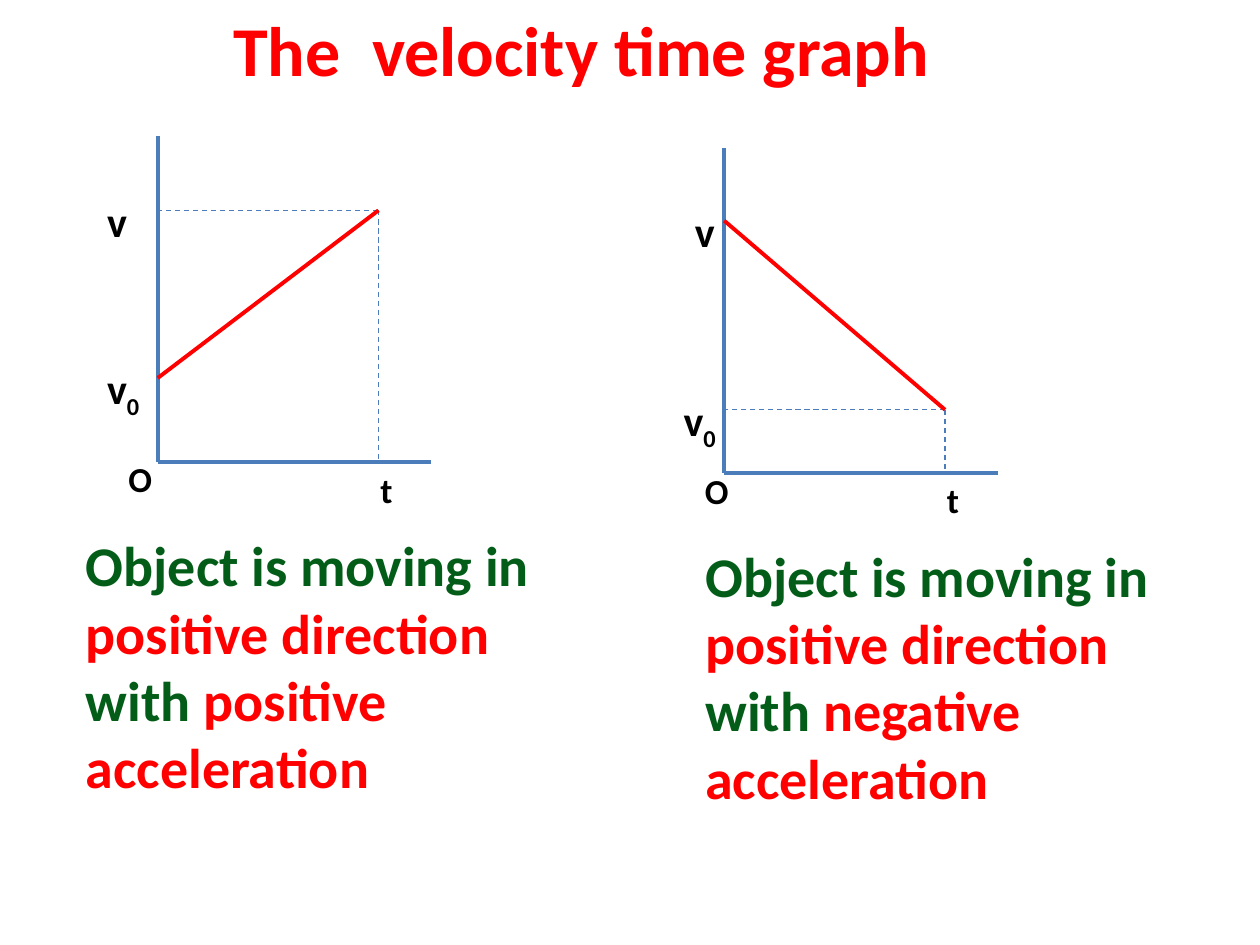
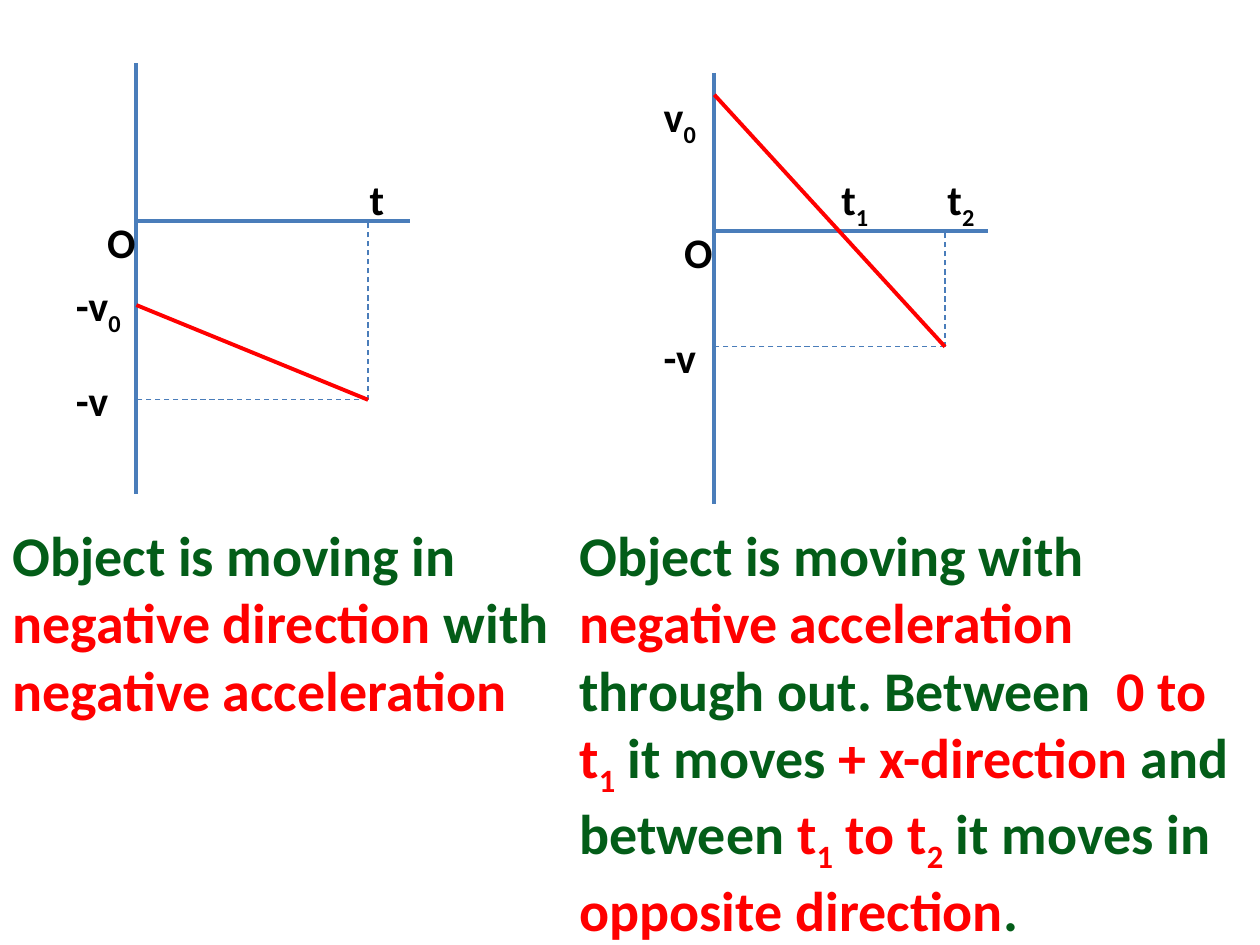
from dataclasses import dataclass

from lxml.etree import SubElement
from pptx import Presentation
from pptx.dml.color import RGBColor
from pptx.enum.dml import MSO_LINE_DASH_STYLE as Dash
from pptx.enum.shapes import MSO_CONNECTOR as Connector
from pptx.enum.text import MSO_ANCHOR as Anchor, MSO_AUTO_SIZE as AutoSize, PP_ALIGN as Align
from pptx.oxml.ns import qn
from pptx.util import Cm, Pt

RED = RGBColor(0xFF, 0x00, 0x00)
GREEN = RGBColor(0x03, 0x5D, 0x18)
BLUE = RGBColor(0x4A, 0x7D, 0xBA)
BLACK = RGBColor(0x00, 0x00, 0x00)
FONT = "Calibri"
TITLE_ONLY, BLANK = 5, 6

AXIS_LENGTH = 5.51
LABEL_WIDTHS = {"t": 0.8, "t_1": 1.09, "t_2": 1.09, "O": 1.05,
                "v": 0.91, "v_0": 1.22, "-v": 1.3, "-v_0": 1.47}


@dataclass
class Graph:
    """A velocity-time graph in cm; all but the origin is relative to the origin."""
    origin: tuple
    top: float
    bottom: float
    start: float
    end: tuple
    labels: list  # (text, left, top)
    axis_label_size: int = 24


def set_font(para, size, color):
    para.font.name = FONT
    para.font.size = Pt(size)
    para.font.bold = True
    para.font.color.rgb = color


def add_text(page, text, left, top, width, height, size, color, wrap=False):
    """Add a text box; *...* marks red words and _ puts the next character below."""
    box = page.shapes.add_textbox(Cm(left), Cm(top), Cm(width), Cm(height))
    box.text_frame.word_wrap = wrap
    para = box.text_frame.paragraphs[0]
    set_font(para, size, color)
    for index, phrase in enumerate(text.split("*")):
        base, *lowered = phrase.split("_")
        pieces = [(base, False)]
        for part in lowered:
            pieces += [(part[0], True), (part[1:], False)]
        for piece, is_subscript in pieces:
            if not piece:
                continue
            span = para.add_run()
            span.text = piece
            if index % 2:
                span.font.color.rgb = RED
            if is_subscript:
                span.font._element.set("baseline", "-25000")


def add_line(page, origin, start, end, color=BLUE, weight=2.25, dash=None):
    left, top = origin
    line = page.shapes.add_connector(
        Connector.STRAIGHT, Cm(left + start[0]), Cm(top + start[1]),
        Cm(left + end[0]), Cm(top + end[1]))
    line.line.color.rgb = color
    line.line.width = Pt(weight)
    if dash:
        line.line.dash_style = dash
    SubElement(line.element.spPr, qn("a:effectLst"))


def add_graph(page, graph):
    origin = graph.origin
    end_time, end_velocity = graph.end
    add_line(page, origin, (0, graph.top), (0, graph.bottom))
    add_line(page, origin, (AXIS_LENGTH, 0), (0, 0))
    for foot in ((0, end_velocity), (end_time, 0)):
        add_line(page, origin, graph.end, foot, weight=0.75, dash=Dash.DASH)
    add_line(page, origin, (0, graph.start), graph.end, RED)
    for text, left, top in graph.labels:
        size = 24 if "v" in text else graph.axis_label_size
        add_text(page, text, origin[0] + left, origin[1] + top,
                 LABEL_WIDTHS[text], size * 0.05, size, BLACK)


def add_caption(page, text, left, top, width, height):
    add_text(page, text, left, top, width, height, 32, GREEN, wrap=True)


def add_title(page, text, left, top, width, height):
    title = page.shapes.title
    title.left, title.top, title.width, title.height = map(Cm, (left, top, width, height))
    frame = title.text_frame
    frame.text = text
    frame.vertical_anchor = Anchor.TOP
    frame.auto_size = AutoSize.NONE
    para = frame.paragraphs[0]
    para.alignment = Align.LEFT
    set_font(para, 40, RED)


def add_positive_direction_page(deck):
    page = deck.slides.add_slide(deck.slide_layouts[TITLE_ONLY])
    add_title(page, "The  velocity time graph", 4.45, 0, 18.85, 1.96)
    add_graph(page, Graph(
        (3.18, 9.32), -6.58, 0, -1.7, (4.45, -5.08),
        [("t", 4.24, 0), ("O", -0.84, -0.23), ("v_0", -1.27, -2.13), ("v", -1.27, -5.51)],
        axis_label_size=20))
    add_caption(page, "Object is moving in *positive direction *with *positive acceleration*",
                1.48, 10.58, 9.95, 5.74)
    add_graph(page, Graph(
        (14.6, 9.53), -6.55, 0, -5.08, (4.45, -1.27),
        [("t", 4.24, 0), ("O", -0.64, -0.2), ("v_0", -1.07, -1.7), ("v", -0.84, -5.51)],
        axis_label_size=20))
    add_caption(page, "Object is moving in *positive direction *with *negative  acceleration*",
                13.97, 10.79, 9.95, 5.74)


def add_negative_velocity_page(deck):
    page = deck.slides.add_slide(deck.slide_layouts[BLANK])
    add_graph(page, Graph(
        (2.75, 4.45), -3.18, 5.51, 1.7, (4.67, 3.61),
        [("t", 4.45, -1.07), ("O", -0.84, -0.2), ("-v_0", -1.47, 1.07), ("-v", -1.47, 2.97)]))
    add_caption(page, "Object is moving in *negative direction *with *negative acceleration*",
                0, 10.37, 11.64, 4.37)
    add_graph(page, Graph(
        (14.4, 4.65), -3.18, 5.51, -2.74, (4.65, 2.34),
        [("t_1", 2.31, -1.27), ("t_2", 4.45, -1.27), ("O", -0.86, -0.2),
         ("v_0", -1.27, -2.95), ("-v", -1.27, 1.91)]))
    add_caption(page, "Object is moving with *negative acceleration *through out. Between  "
                "*0 to t_1* it moves *+ x-direction* and between *t_1 to t_2 *it moves in "
                "*opposite direction*.", 11.43, 10.37, 13.97, 8.46)


def main():
    deck = Presentation()
    deck.slide_width, deck.slide_height = Cm(25.4), Cm(19.05)
    add_positive_direction_page(deck)
    add_negative_velocity_page(deck)
    deck.save("out.pptx")


if __name__ == "__main__":
    main()
